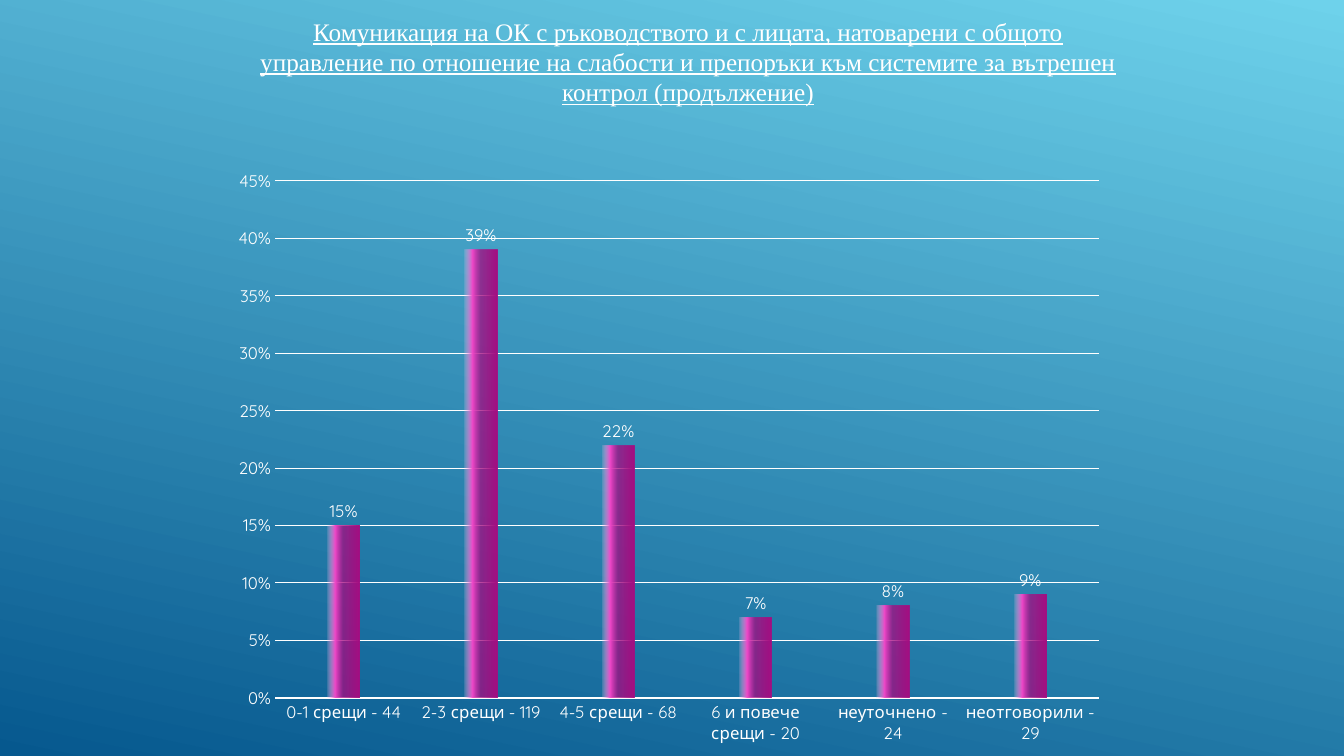
"""Build a slide with a column chart of audit committee meetings."""
import pptx
import pptx.chart.data
import pptx.dml.color
import pptx.enum.chart
import pptx.enum.text
import pptx.oxml
import pptx.oxml.ns
import pptx.util

TITLE = ("Комуникация на ОК с ръководството и с лицата, натоварени с общото управление "
         "по отношение на слабости и препоръки към системите за вътрешен контрол (продължение)")
MEETINGS = [
    ("0-1 срещи - 44", 0.15),
    ("2-3 срещи - 119", 0.39),
    ("4-5 срещи - 68", 0.22),
    ("6 и повече срещи - 20", 0.07),
    ("неуточнено - 24", 0.08),
    ("неотговорили - 29", 0.09),
]
COLORS = {"white": "FFFFFF", "sky": "6ED2EB", "deep": "06588E",
          "plum": "A50E82", "pink": "EF48C9", "blush": "FAC2ED"}
BAR_STOPS = [(0, "plum", 100), (51, "plum", 75), (75, "pink", 100), (100, "blush", 15)]
FONTS = {"title": "Times New Roman", "chart": "Quicksand"}
SLIDE_SIZE = (1344, 756)
TITLE_BOX = (243, 11, 890, 107)
CHART_BOX = (221, 158, 896, 598)
PLOT_BOX = (275, 181, 824, 517)
EMU_PER_PX = 914400 / 100.8


def px(length):
    return pptx.util.Emu(round(length * EMU_PER_PX))


def rgb(name):
    return pptx.dml.color.RGBColor.from_string(COLORS[name])


def style_font(font, face, size):
    font.name = FONTS[face]
    font.size = pptx.util.Pt(size)
    font.color.rgb = rgb("white")


def style_line(line, width):
    line.color.rgb = rgb("white")
    line.width = pptx.util.Pt(width)


def paint_background(page):
    fill = page.background.fill
    fill.gradient()
    fill.gradient_angle = 360 - 102
    for stop, name in zip(fill.gradient_stops, ("sky", "deep")):
        stop.color.rgb = rgb(name)


def add_title(page):
    box = page.shapes.add_textbox(*map(px, TITLE_BOX))
    frame = box.text_frame
    frame.word_wrap = True
    frame.text = TITLE
    para = frame.paragraphs[0]
    para.alignment = pptx.enum.text.PP_ALIGN.CENTER
    para.space_before = pptx.util.Pt(3.6)
    para.space_after = pptx.util.Pt(6)
    span = para.runs[0]
    style_font(span.font, "title", 18)
    span.font.underline = True


def fill_bars(series):
    stops = "".join(
        f'<a:gs pos="{place * 1000}"><a:srgbClr val="{COLORS[name]}">'
        f'<a:alpha val="{opacity * 1000}"/></a:srgbClr></a:gs>'
        for place, name, opacity in BAR_STOPS)
    gradient = pptx.oxml.parse_xml(
        f'<a:gradFill {pptx.oxml.ns.nsdecls("a")}><a:gsLst>{stops}</a:gsLst>'
        '<a:lin ang="10800000" scaled="0"/></a:gradFill>')
    series.format.fill.background()
    properties = series._element.spPr
    properties.replace(properties.find(pptx.oxml.ns.qn("a:noFill")), gradient)


def place_plot(chart):
    left, top, width, height = CHART_BOX
    fractions = {"x": (PLOT_BOX[0] - left) / width, "y": (PLOT_BOX[1] - top) / height,
                 "w": PLOT_BOX[2] / width, "h": PLOT_BOX[3] / height}
    modes = "".join(f'<c:{side}Mode val="edge"/>' for side in "xy")
    sizes = "".join(f'<c:{side} val="{share:.4f}"/>' for side, share in fractions.items())
    layout = pptx.oxml.parse_xml(
        f'<c:layout {pptx.oxml.ns.nsdecls("c")}><c:manualLayout>'
        f'<c:layoutTarget val="inner"/>{modes}{sizes}</c:manualLayout></c:layout>')
    area = chart._chartSpace.chart.plotArea
    for old in area.findall(pptx.oxml.ns.qn("c:layout")):
        area.remove(old)
    area.insert(0, layout)


def add_meetings_chart(page):
    data = pptx.chart.data.CategoryChartData(number_format="0%")
    data.categories = [label for label, share in MEETINGS]
    data.add_series("Series 1", [share for label, share in MEETINGS])
    kind = pptx.enum.chart.XL_CHART_TYPE.COLUMN_CLUSTERED
    chart = page.shapes.add_chart(kind, *map(px, CHART_BOX), data).chart
    style_font(chart.font, "chart", 10)
    chart.has_title = False
    chart.has_legend = False

    for axis in (chart.category_axis, chart.value_axis):
        axis.major_tick_mark = pptx.enum.chart.XL_TICK_MARK.NONE
        axis.minor_tick_mark = pptx.enum.chart.XL_TICK_MARK.NONE
        style_font(axis.tick_labels.font, "chart", 12)
    style_line(chart.category_axis.format.line, 1.5)
    values = chart.value_axis
    values.minimum_scale, values.maximum_scale, values.major_unit = 0, 0.45, 0.05
    values.format.line.fill.background()
    values.tick_labels.number_format = "0%"
    values.tick_labels.number_format_is_linked = False
    style_line(values.major_gridlines.format.line, 0.75)

    plot = chart.plots[0]
    plot.gap_width = 326
    plot.vary_by_categories = False
    plot.has_data_labels = True
    labels = plot.data_labels
    labels.show_value = True
    labels.number_format = "0%"
    labels.number_format_is_linked = False
    labels.position = pptx.enum.chart.XL_LABEL_POSITION.OUTSIDE_END
    style_font(labels.font, "chart", 12)
    fill_bars(plot.series[0])
    place_plot(chart)


def main():
    deck = pptx.Presentation()
    deck.slide_width, deck.slide_height = map(px, SLIDE_SIZE)
    page = deck.slides.add_slide(deck.slide_layouts[6])
    paint_background(page)
    add_meetings_chart(page)
    add_title(page)
    deck.save("out.pptx")


if __name__ == "__main__":
    main()
